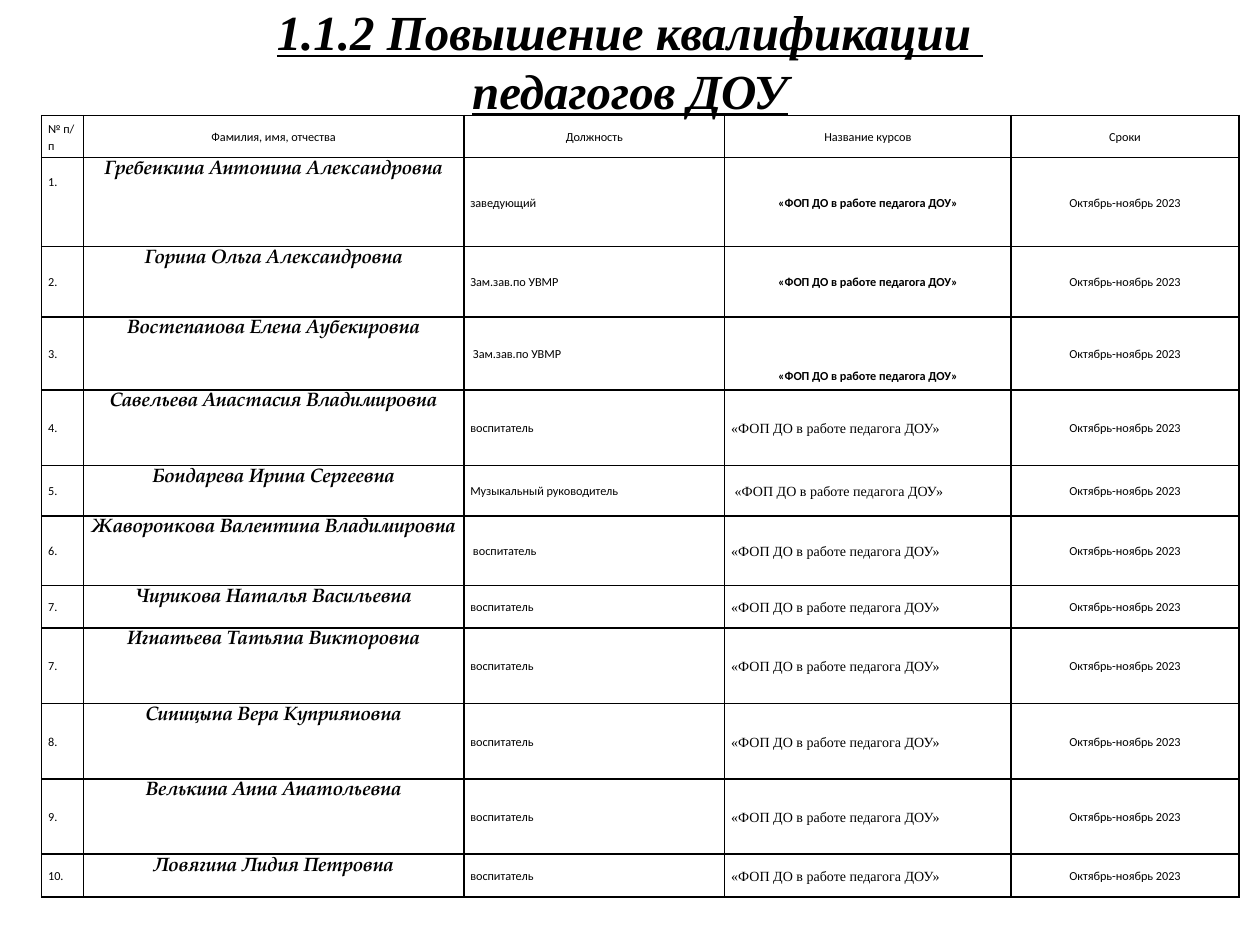
from lxml import etree
from pptx import Presentation
from pptx.dml.color import RGBColor
from pptx.enum.text import MSO_ANCHOR, MSO_AUTO_SIZE, PP_ALIGN
from pptx.oxml.ns import qn
from pptx.util import Cm, Pt

LEFT, CENTER = PP_ALIGN.LEFT, PP_ALIGN.CENTER
TOP, MIDDLE, BOTTOM = MSO_ANCHOR.TOP, MSO_ANCHOR.MIDDLE, MSO_ANCHOR.BOTTOM
NO_AUTOFIT = MSO_AUTO_SIZE.NONE

COLORS = {"text": "000000", "border": "000000"}
SERIF, SANS, SCRIPT = "Times New Roman", "Calibri", "TeX Gyre Pagella"

COURSE = "«ФОП ДО в работе педагога ДОУ»"
DATES = "Октябрь-ноябрь 2023"
HEADERS = ["№\u00a0п/п", "Фамилия, имя, отчества", "Должность", "Название курсов", "Сроки"]
COLUMN_WIDTHS = [0.84, 7.67, 5.26, 5.77, 4.6]
HEADER_HEIGHT = 0.84

# Number, name, position, course, row height in cm
TEACHERS = [
    ("1.", "Гребенкина Антонина Александровна", "заведующий", COURSE, 1.8),
    ("2.", "Горина Ольга Александровна", "Зам.зав.по УВМР", COURSE, 1.42),
    ("3.", "Востепанова Елена Аубекировна", " Зам.зав.по УВМР", COURSE, 1.47),
    ("4.", "Савельева Анастасия Владимировна", "воспитатель", COURSE, 1.52),
    ("5.", "Бондарева Ирина Сергеевна", "Музыкальный руководитель", " " + COURSE, 1.02),
    ("6.", "Жаворонкова Валентина Владимировна", " воспитатель", COURSE, 1.4),
    ("7.", "Чирикова Наталья Васильевна", "воспитатель", COURSE, 0.86),
    ("7.", "Игнатьева Татьяна Викторовна", "воспитатель", COURSE, 1.52),
    ("8.", "Синицына Вера Куприяновна", "воспитатель", COURSE, 1.52),
    ("9.", "Велькина Анна Анатольевна", "воспитатель", COURSE, 1.52),
    ("10.", "Ловягина Лидия Петровна", "воспитатель", COURSE, 0.86),
]
MANAGER_COUNT = 3  # the first rows have the course name in bold


def write_text(frame, text, size=7, font=SANS, bold=False, italic=False,
               underline=False, align=LEFT, line_spacing=1.15):
    frame.text = text
    paragraph = frame.paragraphs[0]
    paragraph.alignment = align
    paragraph.line_spacing = line_spacing
    for run in paragraph.runs:
        run.font.size = Pt(size)
        run.font.name = font
        run.font.bold = bold
        run.font.italic = italic
        run.font.underline = underline
        run.font.color.rgb = RGBColor.from_string(COLORS["text"])


def add_borders(cell, width=1):
    properties = cell._tc.get_or_add_tcPr()
    for position, side in enumerate(("a:lnL", "a:lnR", "a:lnT", "a:lnB")):
        line = etree.Element(qn(side), w=str(Pt(width)))
        fill = etree.SubElement(line, qn("a:solidFill"))
        etree.SubElement(fill, qn("a:srgbClr"), val=COLORS["border"])
        properties.insert(position, line)


def fill_cell(cell, text, anchor=MIDDLE, top=0, bottom=0, **text_format):
    cell.margin_left = cell.margin_right = Cm(0.13)
    cell.margin_top, cell.margin_bottom = Cm(top), Cm(bottom)
    cell.vertical_anchor = anchor
    cell.fill.background()
    write_text(cell.text_frame, text, **text_format)
    add_borders(cell)


def add_title(slide):
    title = slide.shapes.title
    title.left, title.top, title.width, title.height = Cm(1.27), Cm(0.43), Cm(22.86), Cm(1.57)
    frame = title.text_frame
    frame.auto_size = NO_AUTOFIT
    frame.vertical_anchor = MIDDLE
    write_text(frame, "1.1.2 Повышение квалификации \vпедагогов ДОУ", size=28, font=SERIF,
               bold=True, italic=True, underline=True, align=CENTER, line_spacing=1.0)


def add_teacher_table(slide):
    heights = [HEADER_HEIGHT] + [teacher[-1] for teacher in TEACHERS]
    table = slide.shapes.add_table(
        len(heights), len(COLUMN_WIDTHS), Cm(0.84), Cm(2.33),
        Cm(sum(COLUMN_WIDTHS)), Cm(sum(heights))).table
    table.first_row = table.horz_banding = False
    for column, width in zip(table.columns, COLUMN_WIDTHS):
        column.width = Cm(width)
    for row, height in zip(table.rows, heights):
        row.height = Cm(height)

    # Header row
    for index, header in enumerate(HEADERS):
        fill_cell(table.cell(0, index), header, align=CENTER if index else LEFT)

    # One row for each teacher
    for row, (number, name, position, course, _) in enumerate(TEACHERS, start=1):
        number_place = {"anchor": TOP, "top": 0.32} if row == 1 else {}
        course_place = {"anchor": BOTTOM, "bottom": 0.13} if row == MANAGER_COUNT else {}
        if row <= MANAGER_COUNT:
            course_format = {"bold": True, "align": CENTER}
        else:
            course_format = {"size": 8, "font": SERIF}
        fill_cell(table.cell(row, 0), number, **number_place)
        fill_cell(table.cell(row, 1), name, anchor=TOP, size=11, font=SCRIPT,
                  bold=True, italic=True, align=CENTER)
        fill_cell(table.cell(row, 2), position)
        fill_cell(table.cell(row, 3), course, **course_place, **course_format)
        fill_cell(table.cell(row, 4), DATES, align=CENTER)


def main():
    presentation = Presentation()
    presentation.slide_width, presentation.slide_height = Cm(25.4), Cm(19.05)
    slide = presentation.slides.add_slide(presentation.slide_layouts[5])
    add_title(slide)
    add_teacher_table(slide)
    presentation.save("out.pptx")


if __name__ == "__main__":
    main()
